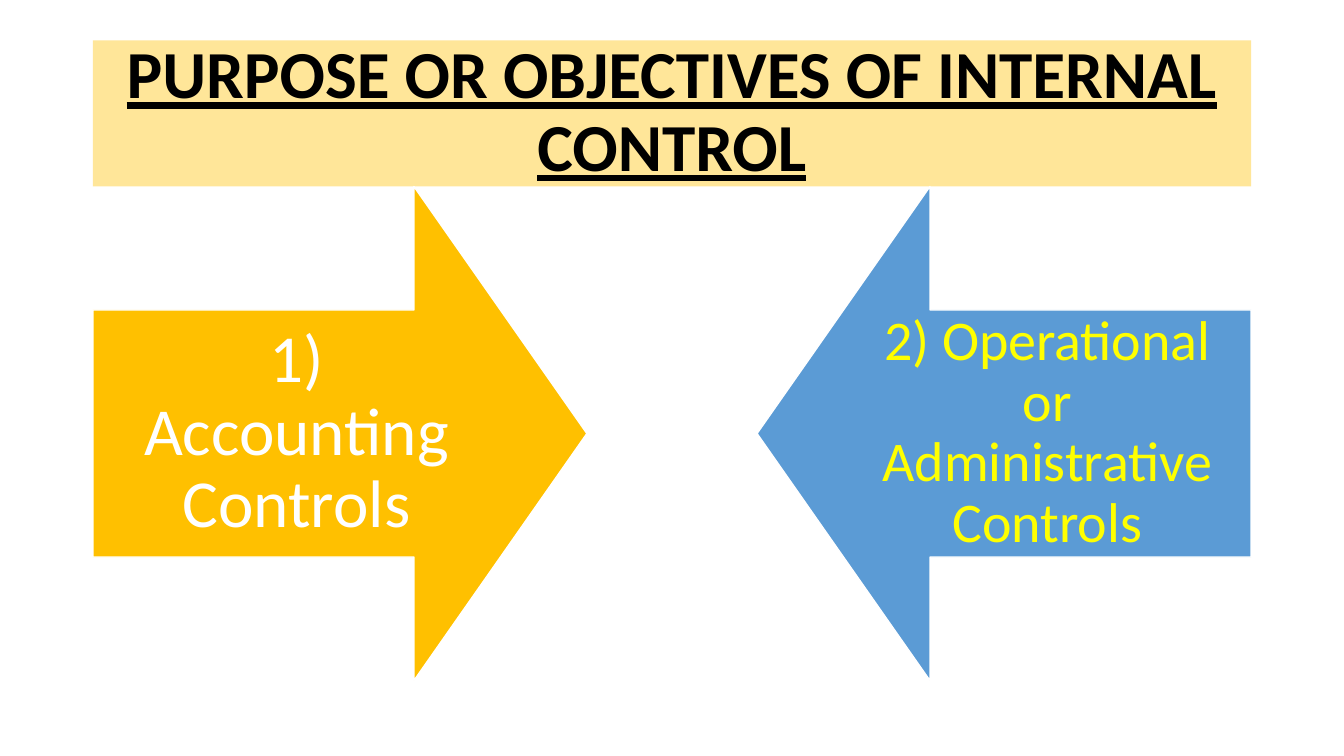
from pptx import Presentation
from pptx import util as u
from pptx.dml.color import RGBColor
from pptx.enum import shapes, text

BLACK = RGBColor(0x00, 0x00, 0x00)
WHITE = RGBColor(0xFF, 0xFF, 0xFF)
YELLOW = RGBColor(0xFF, 0xFF, 0x00)
CREAM = RGBColor(0xFF, 0xE6, 0x99)
AMBER = RGBColor(0xFF, 0xC0, 0x00)
BLUE = RGBColor(0x5B, 0x9B, 0xD5)

TITLE = "PURPOSE OR OBJECTIVES OF INTERNAL CONTROL"
# Arrow shape, wording, fill, text colour, text size, inset in cm
CONTROLS = [
    (shapes.MSO_SHAPE.RIGHT_ARROW, "1) Accounting Controls", AMBER, WHITE, 48, 0.94),
    (shapes.MSO_SHAPE.LEFT_ARROW, "2) Operational or Administrative Controls", BLUE, YELLOW, 40, 0.79),
]

SLIDE_WIDTH, SLIDE_HEIGHT = u.Cm(33.87), u.Cm(19.05)
MARGIN = u.Cm(2.34)
CONTENT_WIDTH = SLIDE_WIDTH - 2 * MARGIN
TITLE_TOP, TITLE_HEIGHT = u.Cm(1.02), u.Cm(3.68)
ARROW_SIZE = u.Cm(12.45)
ARROW_STEP = CONTENT_WIDTH - ARROW_SIZE


def write_centred(shape, wording, size, colour):
    frame = shape.text_frame
    frame.word_wrap = True
    frame.auto_size = text.MSO_AUTO_SIZE.NONE
    frame.vertical_anchor = text.MSO_ANCHOR.MIDDLE
    paragraph = frame.paragraphs[0]
    paragraph.alignment = text.PP_ALIGN.CENTER
    paragraph.line_spacing = 0.9
    run = paragraph.add_run()
    run.text = wording
    run.font.name = "Calibri"
    run.font.size = u.Pt(size)
    run.font.color.rgb = colour
    return run


def fill_shape(shape, colour):
    shape.fill.solid()
    shape.fill.fore_color.rgb = colour


def add_title(slide):
    title = slide.shapes.title
    title.left, title.top = MARGIN, TITLE_TOP
    title.width, title.height = CONTENT_WIDTH, TITLE_HEIGHT
    fill_shape(title, CREAM)
    run = write_centred(title, TITLE, 48, BLACK)
    run.font.bold = True
    run.font.underline = True


def add_arrow(slide, index, kind, wording, fill, colour, size, inset):
    arrow = slide.shapes.add_shape(
        kind, MARGIN + index * ARROW_STEP, TITLE_TOP + TITLE_HEIGHT, ARROW_SIZE, ARROW_SIZE)
    arrow.adjustments[0] = 0.5
    arrow.adjustments[1] = 0.35
    arrow.shadow.inherit = False
    fill_shape(arrow, fill)
    arrow.line.color.rgb = WHITE
    arrow.line.width = u.Pt(1)
    frame = arrow.text_frame
    frame.margin_left = frame.margin_right = u.Cm(inset)
    frame.margin_top = frame.margin_bottom = u.Cm(inset)
    write_centred(arrow, wording, size, colour)


def main():
    presentation = Presentation()
    presentation.slide_width = SLIDE_WIDTH
    presentation.slide_height = SLIDE_HEIGHT
    slide = presentation.slides.add_slide(presentation.slide_layouts[5])
    add_title(slide)
    for index, control in enumerate(CONTROLS):
        add_arrow(slide, index, *control)
    presentation.save("out.pptx")


if __name__ == "__main__":
    main()
